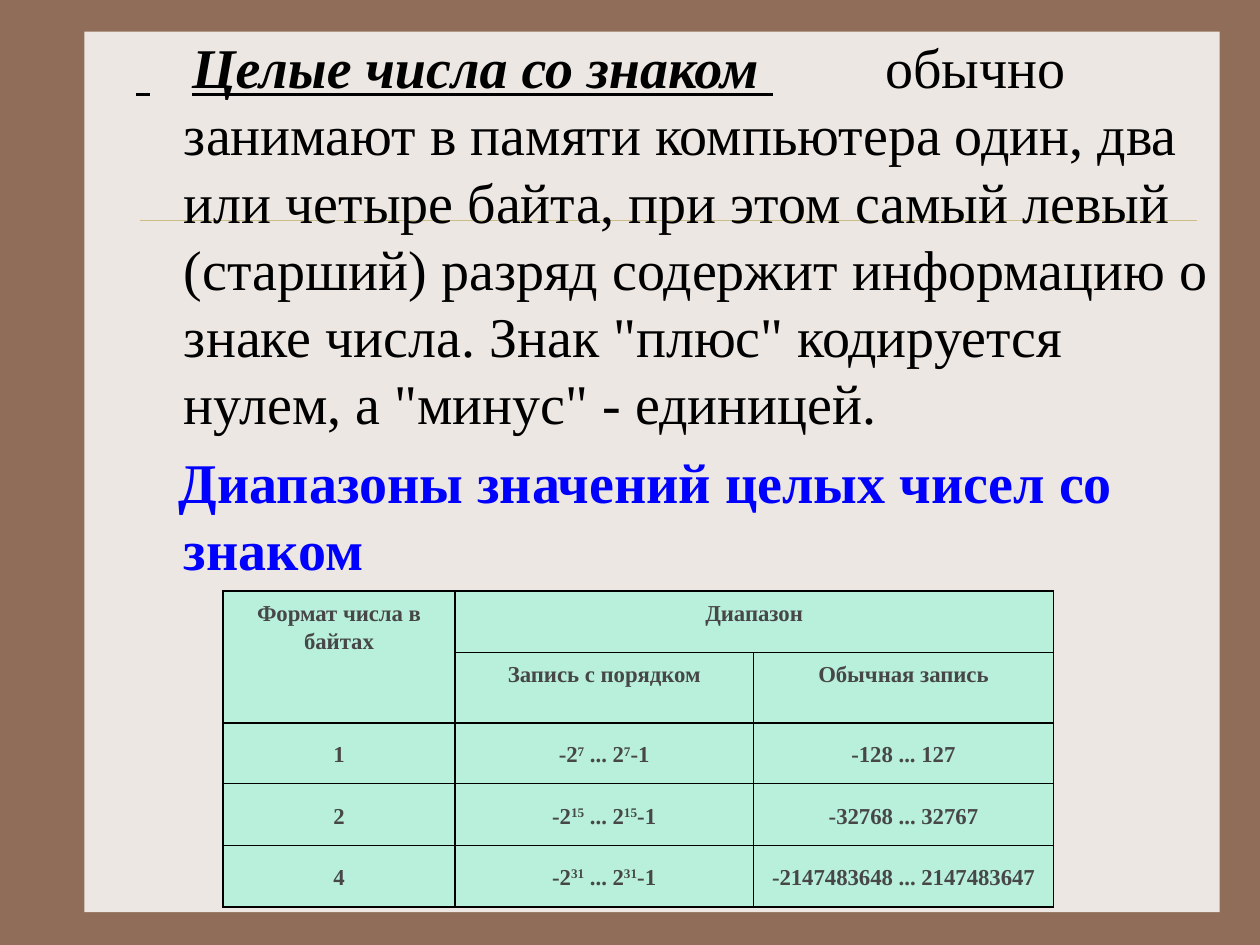
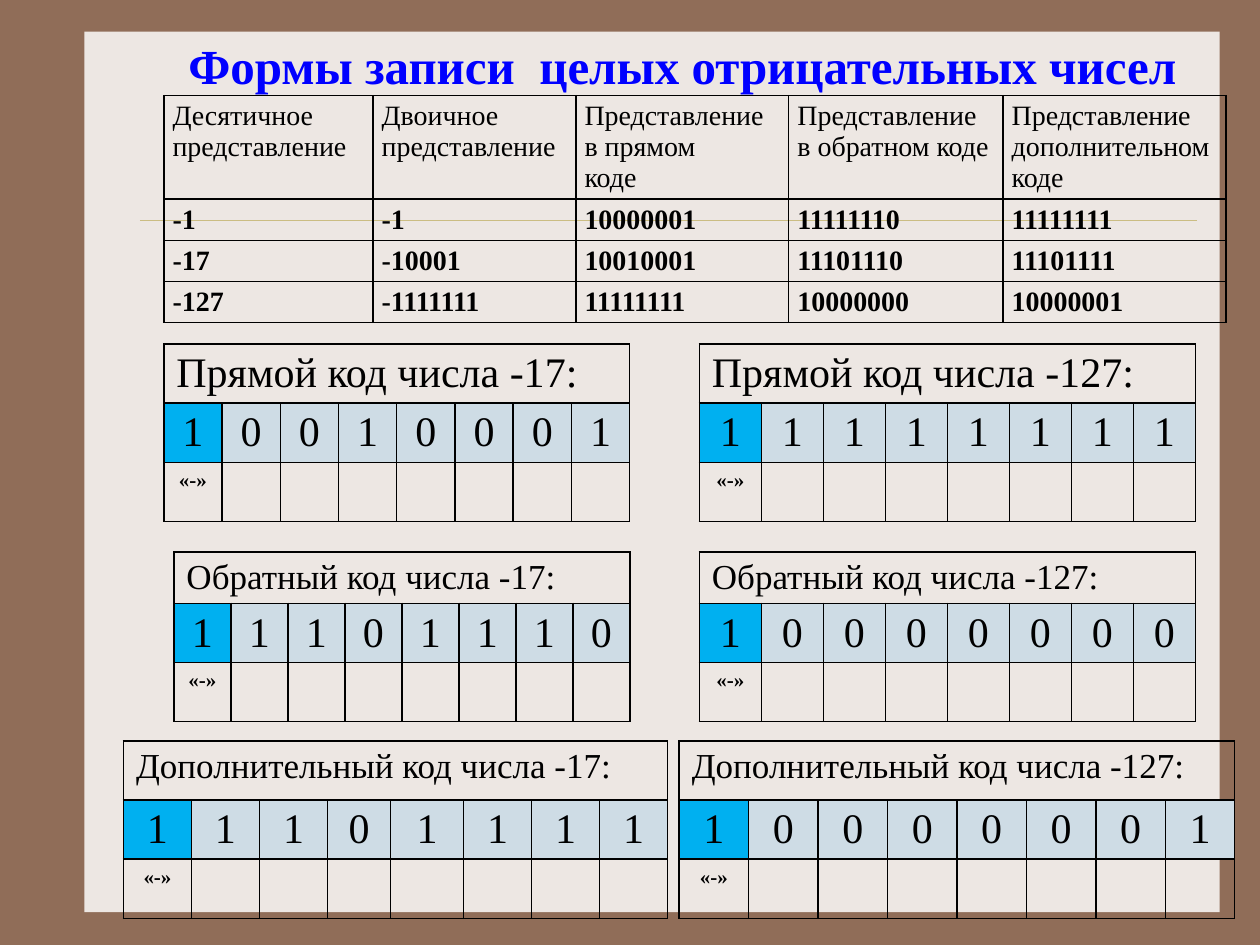
import pptx
import pptx.dml.color
import pptx.enum.shapes
import pptx.enum.text
import pptx.oxml
import pptx.oxml.ns
import pptx.util
from lxml import etree

Inches = pptx.util.Inches
Pt = pptx.util.Pt
RGBColor = pptx.dml.color.RGBColor
ALIGN = pptx.enum.text.PP_ALIGN
ANCHOR = pptx.enum.text.MSO_ANCHOR
qualified = pptx.oxml.ns.qn

BROWN = RGBColor(0x90, 0x6D, 0x58)
PAPER = RGBColor(0xED, 0xE7, 0xE3)
SAND = RGBColor(0xCB, 0xBD, 0x83)
BLACK = RGBColor(0, 0, 0)
BLUE = RGBColor(0, 0, 0xFF)
GREY = RGBColor(0x47, 0x47, 0x47)
MINT = RGBColor(0xB8, 0xF0, 0xDB)
SIGN_BLUE = RGBColor(0, 0xB0, 0xF0)
BIT_BLUE = RGBColor(0xCE, 0xDC, 0xE5)
FONT = "Times New Roman"


def add_text(paragraph, text, size=16, color=BLACK, bold=False, italic=False,
             underline=False, align=None, spacing=0):
    """Append text; ^…^ marks a superscript and \\v a line break."""
    if align is not None:
        paragraph.alignment = align
    for line_number, line in enumerate(text.split("\v")):
        if line_number:
            paragraph.add_line_break()
        for part_number, part in enumerate(line.split("^")):
            if not part:
                continue
            run = paragraph.add_run()
            run.text = part
            run.font.name = FONT
            run.font.size = Pt(size)
            run.font.color.rgb = color
            run.font.bold = bold
            run.font.italic = italic
            run.font.underline = underline
            properties = run._r.get_or_add_rPr()
            if part_number % 2:
                properties.set("baseline", "30000")
            if spacing:
                properties.set("spc", str(spacing * 100))


def place(shape, left, top, width, height):
    shape.left, shape.top = Inches(left), Inches(top)
    shape.width, shape.height = Inches(width), Inches(height)


def build_master(presentation, slide):
    """Draw the panel and rule on a slide, then move them to the master."""
    master = presentation.slide_master
    master.background.fill.solid()
    master.background.fill.fore_color.rgb = BROWN

    panel = slide.shapes.add_shape(pptx.enum.shapes.MSO_SHAPE.RECTANGLE,
                                   Inches(0.67), Inches(0.25), Inches(9.01), Inches(6.99))
    panel.shadow.inherit = False
    panel.fill.solid()
    panel.fill.fore_color.rgb = PAPER
    panel.line.fill.background()

    rule = slide.shapes.add_connector(pptx.enum.shapes.MSO_CONNECTOR.STRAIGHT,
                                      Inches(1.11), Inches(1.75), Inches(9.5), Inches(1.75))
    rule.line.color.rgb = SAND
    rule.line.width = Pt(0.25)
    etree.SubElement(rule.element.spPr, qualified("a:effectLst"))

    for position, shape in enumerate((panel, rule)):
        shape.element.xpath(".//p:cNvPr")[0].set("id", str(101 + position))
        master.shapes.element.insert(2 + position, shape.element)


def add_borders(cell):
    properties = cell._tc.get_or_add_tcPr()
    for side in ("lnL", "lnR", "lnT", "lnB"):
        line = etree.SubElement(properties, qualified(f"a:{side}"), w=str(Pt(1)))
        fill = etree.SubElement(line, qualified("a:solidFill"))
        etree.SubElement(fill, qualified("a:srgbClr"), val=str(BLACK))


def add_grid(slide, left, top, columns, rows, fill=None, margins=(0.1, 0.05)):
    """Add an empty bordered table with the given column widths and row heights."""
    table = slide.shapes.add_table(len(rows), len(columns), Inches(left), Inches(top),
                                   Inches(sum(columns)), Inches(sum(rows))).table
    table.first_row = table.horz_banding = False
    for column, width in zip(table.columns, columns):
        column.width = Inches(width)
    for row, height in zip(table.rows, rows):
        row.height = Inches(height)
    for cell in table.iter_cells():
        add_borders(cell)
        paint(cell, fill)
        cell.margin_left = cell.margin_right = Inches(margins[0])
        cell.margin_top = cell.margin_bottom = Inches(margins[1])
    return table


def paint(cell, color):
    if color is None:
        cell.fill.background()
    else:
        cell.fill.solid()
        cell.fill.fore_color.rgb = color


def add_definition(body, left, top, width, height):
    place(body, left, top, width, height)
    frame = body.text_frame
    frame.word_wrap = True
    frame.auto_size = pptx.enum.text.MSO_AUTO_SIZE.NONE
    frame.vertical_anchor = ANCHOR.TOP
    definition, heading = frame.paragraphs[0], frame.add_paragraph()
    for paragraph, indent, space in ((definition, -0.38, 0), (heading, -0.04, 6.4)):
        properties = paragraph._p.get_or_add_pPr()
        properties.set("marL", str(Inches(0.38)))
        properties.set("indent", str(Inches(indent)))
        etree.SubElement(properties, qualified("a:buNone"))
        paragraph.line_spacing = 1.0
        paragraph.space_before = Pt(space)

    term = {"size": 32, "bold": True, "italic": True, "underline": True}
    add_text(definition, " ", spacing=24, **term)
    add_text(definition, "Целые числа со знаком", **term)
    add_text(definition, " ", spacing=64, **term)
    add_text(definition, "обычно занимают в памяти компьютера один, два или четыре байта, "
             "при этом самый левый (старший) разряд содержит информацию о знаке числа. "
             "Знак \"плюс\" кодируется нулем, а \"минус\" - единицей.", size=32)
    add_text(heading, "Диапазоны значений целых чисел со знаком", size=32, color=BLUE,
             bold=True)


def add_range_table(slide, left, top):
    rows = (
        ("Формат числа в байтах", "Диапазон", ""),
        ("", "Запись с порядком", "Обычная запись"),
        ("1", "-2^7^ ... 2^7^-1", "-128 ... 127"),
        ("2", "-2^15^ ... 2^15^-1", "-32768 ... 32767"),
        ("4", "-2^31^ ... 2^31^-1", "-2147483648 ... 2147483647"),
    )
    table = add_grid(slide, left, top, (1.84, 2.37, 2.38), (0.49, 0.56, 0.48, 0.49, 0.49),
                     fill=MINT)
    table.cell(0, 0).merge(table.cell(1, 0))
    table.cell(0, 1).merge(table.cell(0, 2))
    for row_index, row in enumerate(rows):
        for column_index, text in enumerate(row):
            if not text:
                continue
            cell = table.cell(row_index, column_index)
            cell.vertical_anchor = ANCHOR.TOP if row_index < 2 else ANCHOR.MIDDLE
            paragraph = cell.text_frame.paragraphs[0]
            paragraph.line_spacing = 1.15
            paragraph.space_after = Pt(11.2)
            add_text(paragraph, text, size=13, color=GREY, bold=True, align=ALIGN.CENTER)


def add_forms_table(slide, left, top):
    rows = (
        ("Десятичное\vпредставление", "Двоичное\vпредставление",
         "Представление в прямом\vкоде", "Представление в обратном коде",
         "Представление дополнительном коде"),
        ("-1", "-1", "10000001", "11111110", "11111111"),
        ("-17", "-10001", "10010001", "11101110", "11101111"),
        ("-127", "-1111111", "11111111", "10000000", "10000001"),
    )
    table = add_grid(slide, left, top, (1.66, 1.61, 1.69, 1.7, 1.77),
                     (0.65, 0.25, 0.25, 0.25), margins=(0.07, 0.04))
    for row_index, row in enumerate(rows):
        for column_index, text in enumerate(row):
            add_text(table.cell(row_index, column_index).text_frame.paragraphs[0], text,
                     bold=row_index > 0)


def add_code_table(slide, left, top, columns, caption, bits, caption_size=20,
                   caption_height=0.47):
    """Show a caption over eight bits, the first of which is the sign."""
    table = add_grid(slide, left, top, columns, (caption_height, 0.47, 0.47))
    table.cell(0, 0).merge(table.cell(0, len(bits) - 1))
    add_text(table.cell(0, 0).text_frame.paragraphs[0], caption, size=caption_size)
    for index, bit in enumerate(bits):
        cell = table.cell(1, index)
        paint(cell, BIT_BLUE if index else SIGN_BLUE)
        add_text(cell.text_frame.paragraphs[0], bit, size=24, align=ALIGN.CENTER)
    add_text(table.cell(2, 0).text_frame.paragraphs[0], "«-»", size=12, bold=True,
             align=ALIGN.CENTER)


def build_range_slide(slide):
    title = slide.shapes.title.element
    title.getparent().remove(title)
    add_definition(slide.placeholders[1], 0.98, 0.21, 8.82, 7.01)
    add_range_table(slide, 1.77, 4.69)


def build_forms_slide(slide):
    title = slide.shapes.title
    place(title, 1.28, 0.28, 8.27, 0.47)
    title.text_frame.auto_size = pptx.enum.text.MSO_AUTO_SIZE.NONE
    title.text_frame.vertical_anchor = ANCHOR.MIDDLE
    for text, spacing in (("Формы записи", 0), (" ", 7), ("целых отрицательных чисел", 0)):
        add_text(title.text_frame.paragraphs[0], text, size=28, color=BLUE, bold=True,
                 align=ALIGN.CENTER, spacing=spacing)
    add_forms_table(slide, 1.3, 0.76)

    wide = [0.54] * 3
    code_rows = (
        ("Прямой", 2.73, 24, 0.47,
         ((1.3, [3.7 / 8] * 8, "-17", "10010001"),
          (5.55, [3.94 / 8] * 8, "-127", "11111111"))),
        ("Обратный", 4.38, 20, 0.4,
         ((1.38, [3.62 / 8] * 8, "-17", "11101110"),
          (5.55, [3.94 / 8] * 8, "-127", "10000000"))),
        ("Дополнительный", 5.88, 20, 0.47,
         ((0.98, [*wide, 0.5, 0.58, *wide], "-17", "11101111"),
          (5.39, [4.41 / 8] * 8, "-127", "10000001"))),
    )
    for code, top, size, height, tables in code_rows:
        for left, columns, number, bits in tables:
            add_code_table(slide, left, top, columns, f"{code} код числа {number}:", bits,
                           caption_size=size, caption_height=height)


def main():
    presentation = pptx.Presentation()
    presentation.slide_width, presentation.slide_height = Inches(10), Inches(7.5)
    content_layout, title_only_layout = (presentation.slide_layouts[i] for i in (1, 5))
    range_slide = presentation.slides.add_slide(content_layout)
    build_master(presentation, range_slide)
    build_range_slide(range_slide)
    build_forms_slide(presentation.slides.add_slide(title_only_layout))
    presentation.save("out.pptx")


if __name__ == "__main__":
    main()
